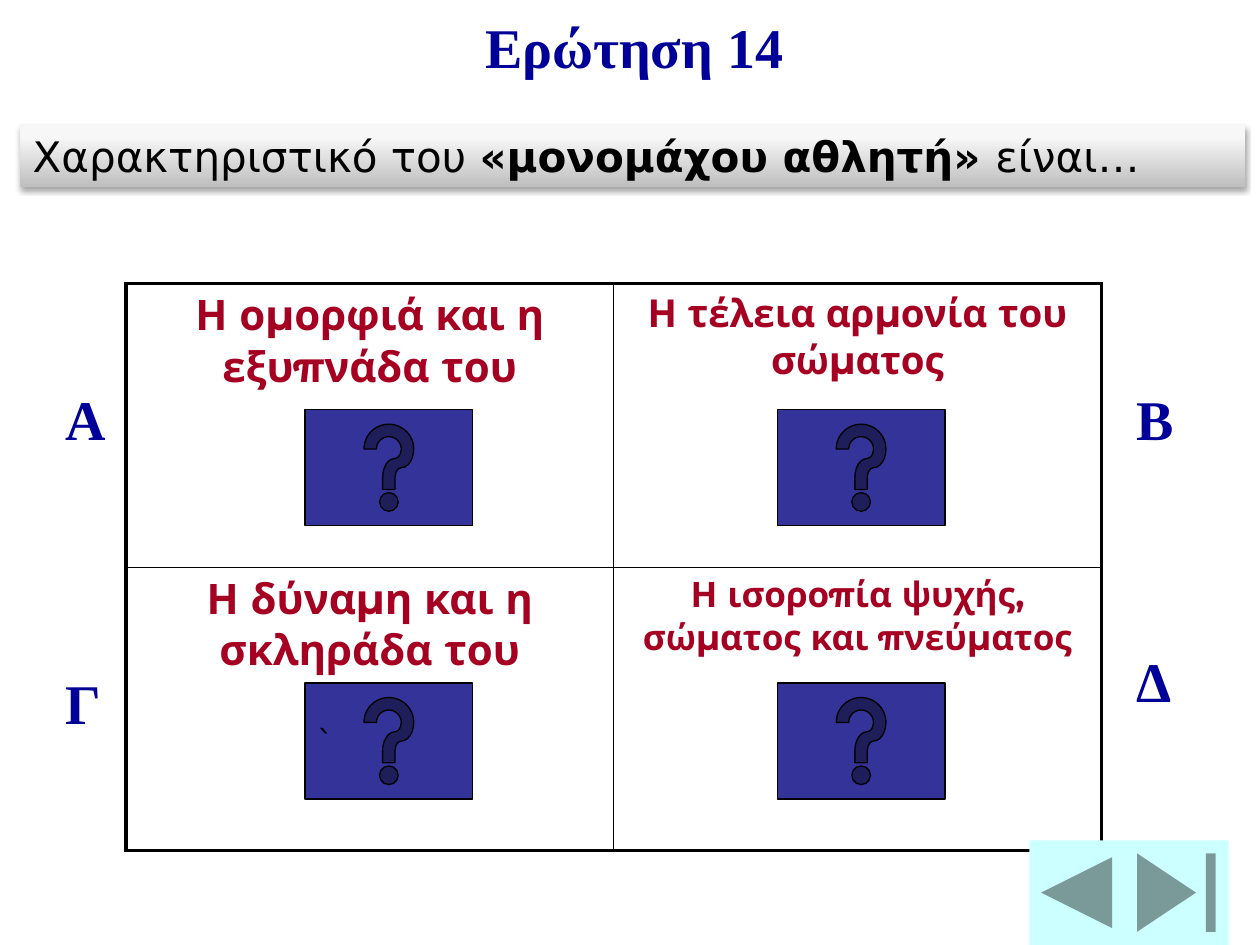
from dataclasses import dataclass

from lxml import etree
from pptx import Presentation
from pptx.dml.color import RGBColor
from pptx.enum.shapes import MSO_SHAPE
from pptx.enum.text import MSO_ANCHOR, PP_ALIGN
from pptx.oxml import parse_xml
from pptx.oxml.ns import nsdecls, qn
from pptx.util import Cm, Pt

HELP = MSO_SHAPE.ACTION_BUTTON_HELP
END = MSO_SHAPE.ACTION_BUTTON_END
BACK = MSO_SHAPE.ACTION_BUTTON_BACK_OR_PREVIOUS
RECT = MSO_SHAPE.RECTANGLE
LEFT, CENTER, JUSTIFY = PP_ALIGN.LEFT, PP_ALIGN.CENTER, PP_ALIGN.JUSTIFY
TOP, MIDDLE = MSO_ANCHOR.TOP, MSO_ANCHOR.MIDDLE


@dataclass(frozen=True)
class Theme:
    heading: str = "000099"
    answer: str = "A50021"
    ink: str = "000000"
    paper: str = "FFFFFF"
    help_fill: str = "333399"
    nav_fill: str = "CCFFFF"
    heading_font: str = "Times New Roman"
    answer_font: str = "Montserrat"
    body_font: str = "DejaVu Sans"
    heading_size: int = 32
    question_size: int = 24
    mark_size: int = 18
    outer_border: float = 2.25
    inner_border: float = 1


@dataclass(frozen=True)
class Box:
    """Position and size in centimetres."""
    x: float
    y: float
    w: float
    h: float

    def lengths(self) -> tuple:
        return Cm(self.x), Cm(self.y), Cm(self.w), Cm(self.h)


@dataclass(frozen=True)
class Answer:
    letter: str
    text: str
    size: int
    letter_y: float


@dataclass(frozen=True)
class Button:
    kind: MSO_SHAPE
    box: Box


THEME = Theme()
HEADING = dict(name=THEME.heading_font, size=THEME.heading_size, color=THEME.heading, bold=True)
QUESTION = dict(name=THEME.body_font, size=THEME.question_size, color=THEME.ink, bold=False)

ANSWERS = [
    [Answer("Α", "Η ομορφιά και η εξυπνάδα του", 24, 7.62),
     Answer("Β", "Η τέλεια αρμονία του σώματος", 22, 7.62)],
    [Answer("Γ", "Η δύναμη και η σκληράδα του", 24, 13.34),
     Answer("Δ", "Η ισοροπία ψυχής, σώματος και πνεύματος", 20, 12.9)],
]
LETTER_X = (1.07, 22.66)
HELP_X, HELP_Y = (6.15, 15.67), (8.26, 13.77)
NAV = [Button(END, Box(22.66, 16.94, 2.11, 2.11)),
       Button(BACK, Box(20.75, 16.94, 1.91, 2.11))]


def add_run(p, text: str, fmt: dict) -> None:
    r = p.add_run()
    r.text = text
    for key, value in fmt.items():
        if key == "color":
            r.font.color.rgb = RGBColor.from_string(value)
        else:
            setattr(r.font, key, Pt(value) if key == "size" else value)


def add_heading(s, box: Box, text: str) -> None:
    """Fill a text box or placeholder with one heading line."""
    s.left, s.top, s.width, s.height = box.lengths()
    tf = s.text_frame
    frame = dict(word_wrap=True, vertical_anchor=TOP, margin_left=Cm(0.25),
                 margin_right=Cm(0.25), margin_top=Cm(0.13), margin_bottom=Cm(0.13))
    for key, value in frame.items():
        setattr(tf, key, value)
    p = tf.paragraphs[0]
    p.alignment = LEFT
    add_run(p, text, HEADING)


def add_button(shapes, button: Button, fill: str, outlined: bool = False):
    s = shapes.add_shape(button.kind, *button.box.lengths())
    s.shadow.inherit = False
    s.fill.solid()
    s.fill.fore_color.rgb = RGBColor.from_string(fill)
    if outlined:
        s.line.color.rgb = RGBColor.from_string(THEME.ink)
        s.line.width = Pt(0.75)
    else:
        s.line.fill.background()
    return s


def set_borders(cell, widths: dict) -> None:
    """Draw the cell sides; they must come before the fill."""
    tc_pr = cell._tc.get_or_add_tcPr()
    for i, (side, width) in enumerate(widths.items()):
        ln = etree.Element(qn(f"a:ln{side}"), w=str(Pt(width)))
        solid = etree.SubElement(ln, qn("a:solidFill"))
        etree.SubElement(solid, qn("a:srgbClr"), val=THEME.ink)
        tc_pr.insert(i, ln)


def add_answer_table(shapes) -> None:
    table = shapes.add_table(2, 2, *Box(2.54, 5.72, 19.66, 11.43).lengths()).table
    outer, inner = THEME.outer_border, THEME.inner_border
    for i, row in enumerate(ANSWERS):
        for j, answer in enumerate(row):
            cell = table.cell(i, j)
            cell.fill.solid()
            cell.fill.fore_color.rgb = RGBColor.from_string(THEME.paper)
            set_borders(cell, {"L": inner if j else outer, "R": outer if j else inner,
                               "T": inner if i else outer, "B": outer if i else inner})
            p = cell.text_frame.paragraphs[0]
            p.alignment = CENTER
            add_run(p, answer.text, dict(name=THEME.answer_font, size=answer.size,
                                         color=THEME.answer, bold=True))


def add_question(shapes) -> None:
    s = shapes.add_shape(RECT, *Box(0.41, 2.51, 24.69, 1.27).lengths())
    s.line.fill.background()
    # Grey gradient from bottom to top, with a soft shadow below
    stops = "".join(f'<a:gs pos="{pos}000"><a:srgbClr val="{color}"/></a:gs>'
                    for pos, color in ((0, "BEBEBE"), (80, "F7F7F7"), (100, "F8F8F8")))
    gradient = parse_xml(f'<a:gradFill {nsdecls("a")} rotWithShape="1"><a:gsLst>{stops}'
                         '</a:gsLst><a:lin ang="16200000" scaled="0"/></a:gradFill>')
    shadow = parse_xml(f'<a:effectLst {nsdecls("a")}><a:outerShdw blurRad="{Pt(3.1)}" '
                       f'dist="{Pt(1.8)}" dir="5400000" rotWithShape="0">'
                       f'<a:srgbClr val="{THEME.ink}"><a:alpha val="35000"/></a:srgbClr>'
                       '</a:outerShdw></a:effectLst>')
    sp_pr = s._element.spPr
    sp_pr.find(qn("a:prstGeom")).addnext(gradient)
    sp_pr.append(shadow)
    tf = s.text_frame
    tf.word_wrap = True
    tf.vertical_anchor = TOP
    p = tf.paragraphs[0]
    p.alignment = JUSTIFY
    add_run(p, "Χαρακτηριστικό του ", QUESTION)
    add_run(p, "«μονομάχου αθλητή» ", QUESTION | dict(bold=True))
    add_run(p, "είναι…", QUESTION)


def main() -> None:
    prs = Presentation()
    prs.slide_width, prs.slide_height = Cm(25.4), Cm(19.05)
    slide = prs.slides.add_slide(prs.slide_layouts[5])
    shapes = slide.shapes

    # Title, answers and their letters
    add_heading(shapes.title, Box(9.53, 0.13, 6.78, 1.63), "Ερώτηση 14")
    add_answer_table(shapes)
    for row in ANSWERS:
        for x, answer in zip(LETTER_X, row):
            box = Box(x, answer.letter_y, 1.27, 1.6)
            add_heading(shapes.add_textbox(*box.lengths()), box, answer.letter)

    # Help buttons, one per answer
    helps = [add_button(shapes, Button(HELP, Box(x, y, 3.38, 2.34)), THEME.help_fill, True)
             for y in HELP_Y for x in HELP_X]
    tf = helps[2].text_frame
    tf.word_wrap = False
    tf.vertical_anchor = MIDDLE
    p = tf.paragraphs[0]
    p.alignment = LEFT
    add_run(p, "`", QUESTION | dict(size=THEME.mark_size))

    # Navigation and question banner
    for button in NAV:
        add_button(shapes, button, THEME.nav_fill)
    add_question(shapes)
    prs.save("out.pptx")


if __name__ == "__main__":
    main()
